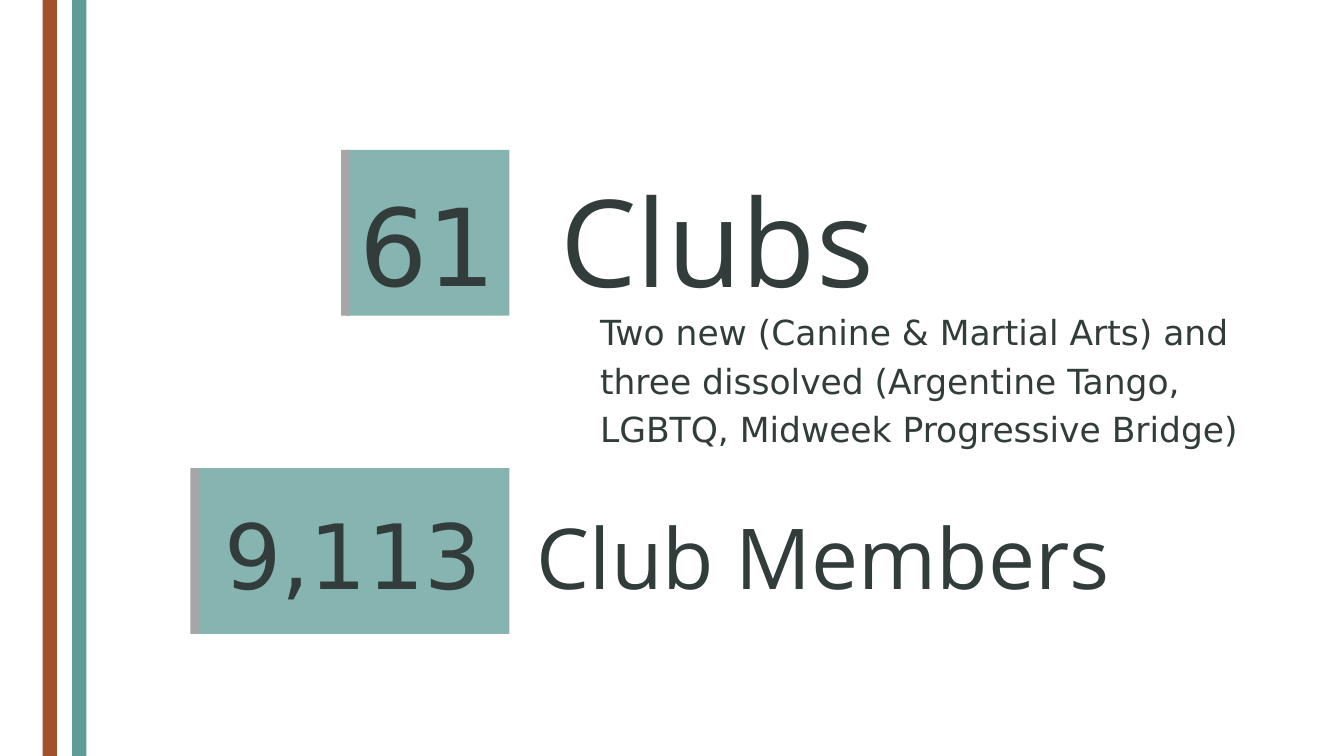
import pptx
import pptx.util
import pptx.dml.color
import pptx.enum.shapes
import pptx.enum.text
import pptx.oxml
import pptx.oxml.ns
from dataclasses import dataclass

Pt = pptx.util.Pt
Align = pptx.enum.text.PP_ALIGN


@dataclass(frozen=True)
class Theme:
    ink: str = "323C3B"
    teal: str = "5E9C98"
    rust: str = "A3512B"
    gray: str = "A6A6A6"
    head: str = "Open Sans"
    body: str = "DejaVu Sans"
    clubs: float = 130
    members: float = 90
    count: float = 115
    total: float = 96.4
    note: float = 37


THEME = Theme()
WIDTH, HEIGHT = 1440, 810


def color(code):
    return pptx.dml.color.RGBColor.from_string(code)


def block(slide, left, top, width, height, fill, alpha=None):
    """Plain filled rectangle; alpha is opacity in percent."""
    kind = pptx.enum.shapes.MSO_SHAPE.RECTANGLE
    shape = slide.shapes.add_shape(kind, Pt(left), Pt(top), Pt(width), Pt(height))
    shape.shadow.inherit = False
    shape.line.fill.background()
    shape.fill.solid()
    shape.fill.fore_color.rgb = color(fill)
    if alpha is not None:
        tint = shape.fill._xPr.find(".//" + pptx.oxml.ns.qn("a:srgbClr"))
        node = pptx.oxml.parse_xml(
            f'<a:alpha {pptx.oxml.ns.nsdecls("a")} val="{alpha * 1000}"/>')
        tint.append(node)


def tile(slide, left, top):
    """Teal tile with a gray strip on its left; tiles share a right edge."""
    right, height = 545.8, 177.6
    block(slide, left, top, right - left, height, THEME.teal, 75)
    block(slide, left - 5.4, top, 9.8, height, THEME.gray)


def label(slide, text, left, top, width, height, size, font, pitch, align=Align.LEFT):
    """Text box without margins; pitch is the line spacing in points."""
    box = slide.shapes.add_textbox(Pt(left), Pt(top), Pt(width), Pt(height))
    frame = box.text_frame
    frame.word_wrap = True
    frame.auto_size = pptx.enum.text.MSO_AUTO_SIZE.SHAPE_TO_FIT_TEXT
    frame.margin_left = frame.margin_right = 0
    frame.margin_top = frame.margin_bottom = 0
    frame.text = text
    para = frame.paragraphs[0]
    para.alignment = align
    para.line_spacing = Pt(pitch)
    face = para.runs[0].font
    face.name, face.size = font, Pt(size)
    face.color.rgb = color(THEME.ink)


def main():
    deck = pptx.Presentation()
    deck.slide_width, deck.slide_height = Pt(WIDTH), Pt(HEIGHT)
    slide = deck.slides.add_slide(deck.slide_layouts[6])

    # Side bars
    for left, fill in ((45.6, THEME.rust), (77.2, THEME.teal)):
        block(slide, left, 0, 15.4, HEIGHT, fill)

    # Number of clubs
    tile(slide, 370.8, 160.6)
    label(slide, "61", 370.8, 168.5, 175, 149.8,
          THEME.count, THEME.body, 161, Align.CENTER)
    label(slide, "Clubs ", 585.4, 151.9, 400.3, 175.7,
          THEME.clubs, THEME.head, 182, Align.CENTER)
    label(slide, "Two new (Canine & Martial Arts) and three dissolved "
          "(Argentine Tango, LGBTQ, Midweek Progressive Bridge)",
          643, 326.2, 701.3, 157.7, THEME.note, THEME.body, 51.8)

    # Number of members
    tile(slide, 209.5, 501.6)
    label(slide, "9,113", 182.9, 515.5, 390.2, 128.9,
          THEME.total, THEME.body, 134.9, Align.CENTER)
    label(slide, "Club Members", 575.3, 523.4, 715.7, 121,
          THEME.members, THEME.head, 126)

    deck.save("out.pptx")


if __name__ == "__main__":
    main()
